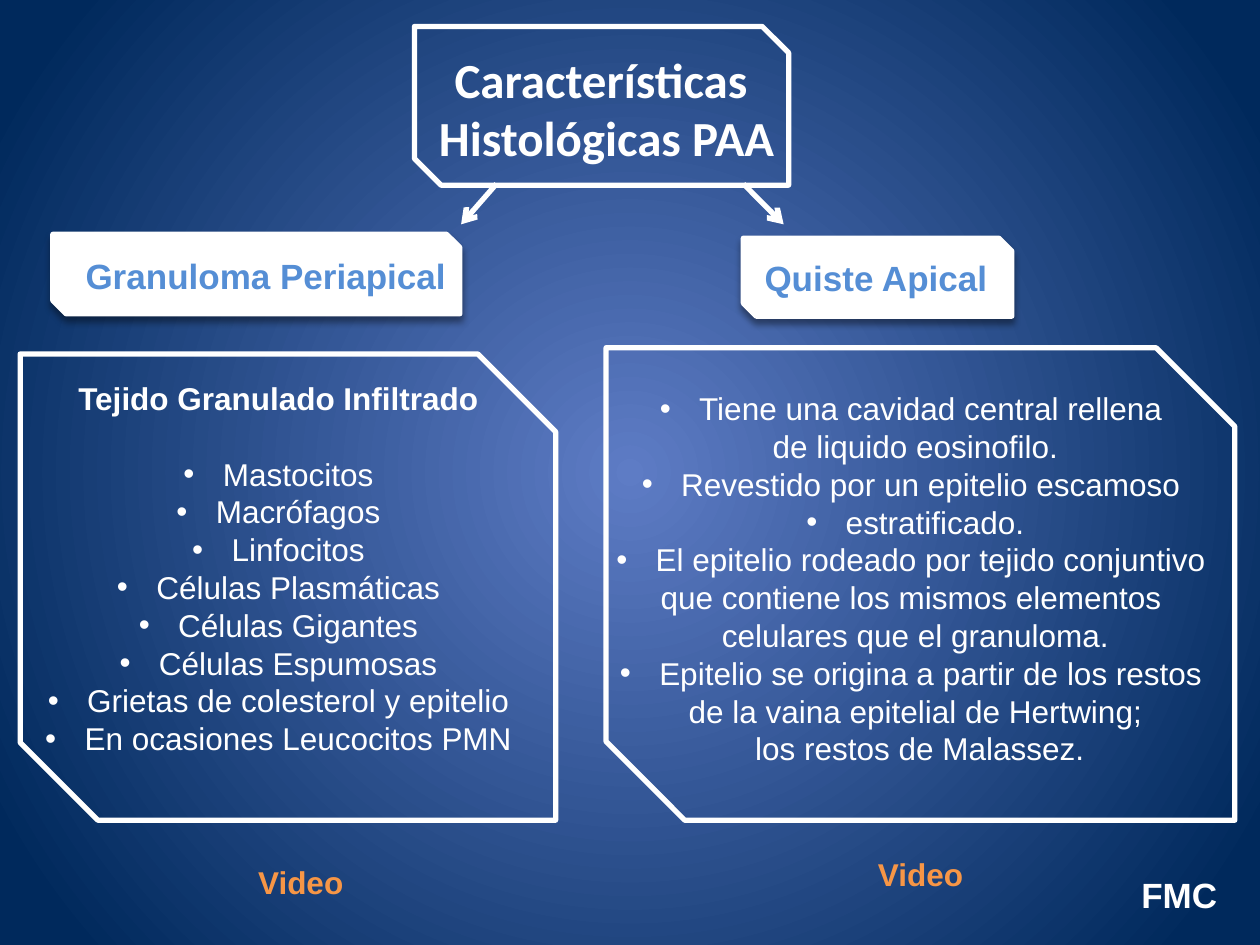
from lxml import etree
from pptx import Presentation
from pptx.dml.color import RGBColor
from pptx.enum import shapes, text
from pptx.oxml import parse_xml
from pptx.oxml.ns import qn
from pptx.util import Pt

WHITE = RGBColor(0xFF, 0xFF, 0xFF)
SKY = RGBColor(0x55, 0x8E, 0xD5)
ORANGE = RGBColor(0xF7, 0x96, 0x46)
GLOW = RGBColor(0x5E, 0x7C, 0xC5)
NAVY = RGBColor(0x00, 0x29, 0x5C)

NS = 'xmlns:a="http://schemas.openxmlformats.org/drawingml/2006/main"'
LEFT, MID, RIGHT = (text.PP_ALIGN.LEFT, text.PP_ALIGN.CENTER,
                    text.PP_ALIGN.RIGHT)
PITCH = 21.6  # line height of the lists
HANG = 22.5   # bullet indent

# Each list entry: (has bullet, words)
TISSUE = [(True, words) for words in (
    "Mastocitos", "Macrófagos", "Linfocitos", "Células Plasmáticas",
    "Células Gigantes", "Células Espumosas",
    "Grietas de colesterol y epitelio", "En ocasiones Leucocitos PMN")]
CYST = [
    (True, "Tiene una cavidad central rellena "),
    (False, "de liquido eosinofilo."),
    (True, "Revestido por un epitelio escamoso "),
    (True, "estratificado."),
    (True, "El epitelio rodeado por tejido conjuntivo "),
    (False, "que contiene los mismos elementos "),
    (False, "celulares que el granuloma."),
    (True, "Epitelio se origina a partir de los restos "),
    (False, "de la vaina epitelial de Hertwing;"),
    (False, " los restos de Malassez."),
]


def paint(slide):
    """Radial background, light in the centre."""
    fill = slide.background.fill
    fill.gradient()
    for stop, tint, pos in zip(fill.gradient_stops, (GLOW, NAVY), (0, 0.92)):
        stop.color.rgb = tint
        stop.position = pos
    grad = slide.element.find(".//" + qn("a:gradFill"))
    grad.replace(grad.find(qn("a:lin")), parse_xml(
        f'<a:path {NS} path="circle">'
        '<a:fillToRect l="50000" t="50000" r="50000" b="50000"/></a:path>'))


def snip(slide, x, y, w, h, solid=False):
    """Frame with two cut corners; a solid one is white and casts a shadow."""
    box = slide.shapes.add_shape(
        shapes.MSO_SHAPE.SNIP_2_DIAG_RECTANGLE, Pt(x), Pt(y), Pt(w), Pt(h))
    box.shadow.inherit = False
    box.line.color.rgb = WHITE
    box.line.width = Pt(3)
    if not solid:
        box.fill.background()
        return
    box.fill.solid()
    box.fill.fore_color.rgb = WHITE
    box.element.spPr.find(qn("a:effectLst")).append(parse_xml(
        f'<a:outerShdw {NS} blurRad="{Pt(4)}" dist="{Pt(3)}" dir="5400000" '
        'rotWithShape="0"><a:srgbClr val="000000"><a:alpha val="40000"/>'
        '</a:srgbClr></a:outerShdw>'))


def arrow(slide, x1, y1, x2, y2):
    line = slide.shapes.add_connector(
        shapes.MSO_CONNECTOR.STRAIGHT, Pt(x1), Pt(y1), Pt(x2), Pt(y2))
    line.line.color.rgb = WHITE
    line.line.width = Pt(3)
    etree.SubElement(line.line._get_or_add_ln(), qn("a:tailEnd"), type="arrow")
    etree.SubElement(line.element.spPr, qn("a:effectLst"))


def frame(slide, x, y, w, h, wrap=False):
    box = slide.shapes.add_textbox(Pt(x), Pt(y), Pt(w), Pt(h))
    box.text_frame.word_wrap = wrap
    return box.text_frame


def write(body, words, size, tint, bold=True, align=MID, face="Arial"):
    """Add one paragraph with one run."""
    para = body.paragraphs[0]
    if para.runs:
        para = body.add_paragraph()
    para.alignment = align
    run = para.add_run()
    run.text = words
    font = run.font
    font.name, font.size, font.bold = face, Pt(size), bold
    font.color.rgb = tint
    return para


def fill_list(body, items):
    for dot, words in items:
        para = write(body, words, 18, WHITE, bold=False)
        para.line_spacing = Pt(PITCH)
        if dot:
            props = para._p.get_or_add_pPr()
            props.set("marL", str(Pt(HANG)))
            props.set("indent", str(-Pt(HANG)))
            etree.SubElement(props, qn("a:buFont"), typeface="Arial")
            etree.SubElement(props, qn("a:buChar"), char="•")


def main():
    deck = Presentation()
    deck.slide_width, deck.slide_height = Pt(720), Pt(540)
    slide = deck.slides.add_slide(deck.slide_layouts[6])
    paint(slide)

    # Title and its two branches
    snip(slide, 236.9, 15.1, 213.8, 90.7)
    title = frame(slide, 242.6, 24.5, 208, 75)
    for words in ("Características ", "Histológicas PAA"):
        write(title, words, 28, WHITE, face="Calibri")
    arrow(slide, 283.7, 105.1, 263.5, 128.2)
    arrow(slide, 424.8, 105.1, 447.8, 128.2)

    # Branch headings
    snip(slide, 30.2, 133.9, 232.6, 45.4, solid=True)
    write(frame(slide, 41, 141.8, 221.8, 31.7),
          "Granuloma Periapical", 20, SKY)
    snip(slide, 424.8, 136.1, 153.4, 44.6, solid=True)
    write(frame(slide, 429.8, 143.3, 142.6, 31.7),
          "Quiste Apical", 20, SKY, align=LEFT)

    # Granuloma list
    snip(slide, 11.5, 202.3, 306, 266.4)
    tissue = frame(slide, 17.3, 213.1, 283.7, 247)
    head = write(tissue, "Tejido Granulado Infiltrado", 18, WHITE)
    head.line_spacing = head.space_after = Pt(PITCH)
    fill_list(tissue, TISSUE)

    # Cyst list
    snip(slide, 346.3, 198.7, 359.3, 270)
    fill_list(frame(slide, 343.4, 218.9, 359.3, 225.4), CYST)

    # Footer labels
    for x, y in ((140.4, 489.6), (494.6, 485.3)):
        write(frame(slide, x, y, 63.4, 28.8), "Video", 18, ORANGE, align=LEFT)
    mark = frame(slide, 640.1, 496.8, 62.6, 28.8, wrap=True)
    mark.vertical_anchor = text.MSO_ANCHOR.MIDDLE
    write(mark, "FMC", 20, WHITE, align=RIGHT)

    deck.save("out.pptx")


if __name__ == "__main__":
    main()
